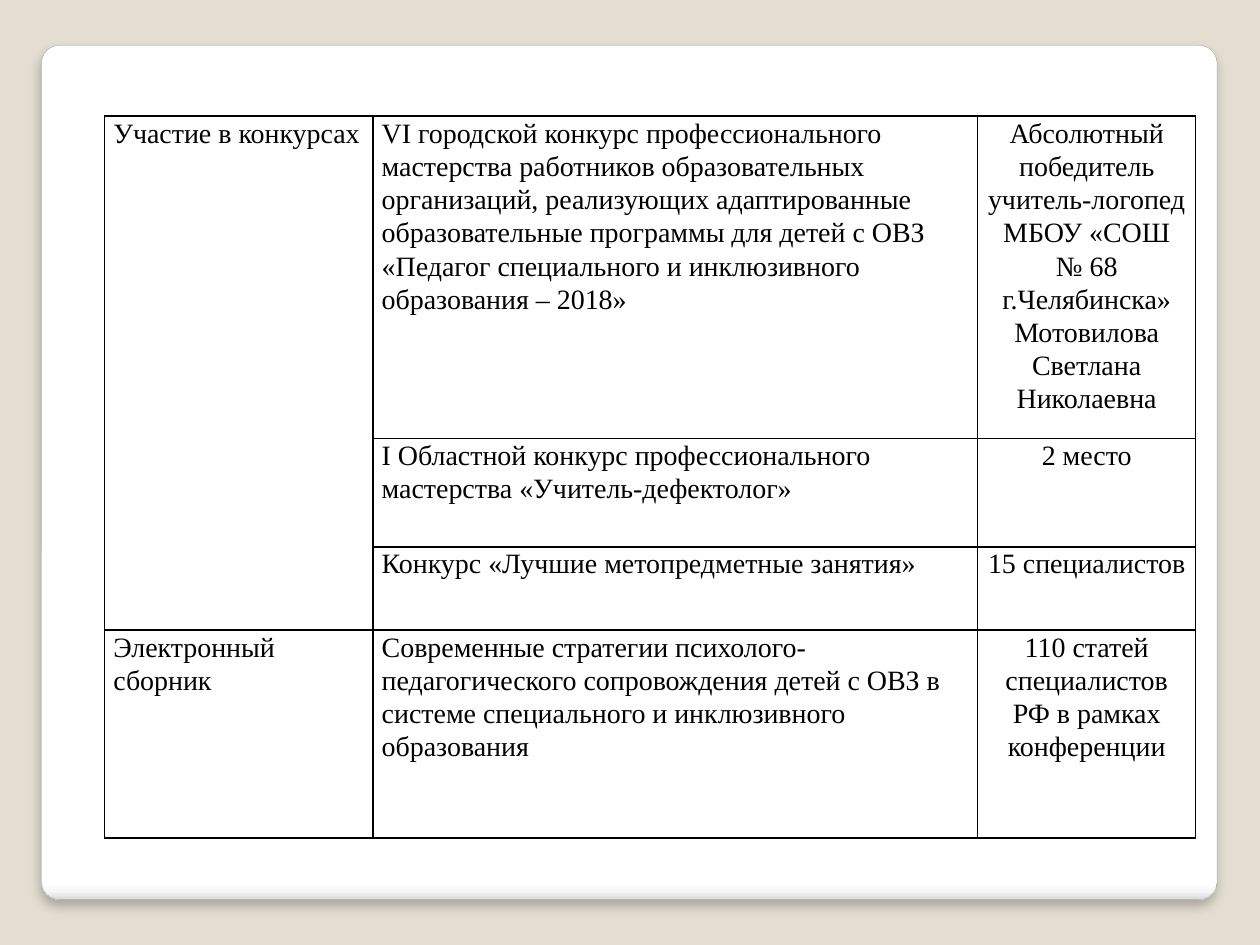
from lxml.etree import SubElement
from pptx import Presentation
from pptx.dml.color import RGBColor
from pptx.enum.shapes import MSO_SHAPE
from pptx.enum.text import PP_ALIGN
from pptx.oxml import parse_xml
from pptx.oxml.ns import nsdecls, qn
from pptx.util import Inches, Pt

COLORS = {"background": "E3DED1", "text": "000000", "border": "000000",
          "panel_line": "A4A4A4", "shadow": "000000"}
PANEL_STOPS = [(0, "FFFFFF"), (98, "FFFFFF"), (99, "F7F7F7"), (100, "DADADA")]
FONT = "Times New Roman"

COLUMN_WIDTHS = [2.13, 4.8, 1.73]
ROW_HEIGHTS = [2.56, 0.86, 0.66, 1.65]
CENTERED_COLUMN = 2
# Each cell is a list of paragraphs; an empty list is covered by the cell above.
ROWS = [
    (["Участие в конкурсах"],
     ["VI городской конкурс профессионального мастерства работников "
      "образовательных организаций, реализующих адаптированные",
      "образовательные программы для детей с ОВЗ",
      "«Педагог специального и инклюзивного образования – 2018»"],
     ["Абсолютный победитель учитель-логопед МБОУ «СОШ № 68 г.Челябинска»",
      "Мотовилова Светлана Николаевна"]),
    ([],
     ["I Областной конкурс профессионального мастерства «Учитель-дефектолог»"],
     ["2 место"]),
    ([],
     ["Конкурс «Лучшие метопредметные занятия»"],
     ["15 специалистов"]),
    (["Электронный сборник"],
     ["Современные стратегии психолого-педагогического сопровождения детей "
      "с ОВЗ в системе специального и инклюзивного образования"],
     ["110 статей", "специалистов РФ в рамках конференции"]),
]


def add_panel(slide):
    panel = slide.shapes.add_shape(MSO_SHAPE.ROUNDED_RECTANGLE, Inches(0.33),
                                   Inches(0.36), Inches(9.33), Inches(6.78))
    panel.adjustments[0] = 0.021
    panel.line.color.rgb = RGBColor.from_string(COLORS["panel_line"])
    panel.line.width = Pt(0.16)
    stops = "".join(f'<a:gs pos="{position * 1000}"><a:srgbClr val="{color}"/></a:gs>'
                    for position, color in PANEL_STOPS)
    properties = panel.element.spPr
    properties.find(qn("a:prstGeom")).addnext(parse_xml(
        f'<a:gradFill {nsdecls("a")} rotWithShape="1"><a:gsLst>{stops}</a:gsLst>'
        '<a:lin ang="5400000" scaled="0"/></a:gradFill>'))
    properties.append(parse_xml(
        f'<a:effectLst {nsdecls("a")}><a:outerShdw blurRad="{Pt(6)}" dist="{Pt(4)}" '
        f'dir="5400000" algn="tl" rotWithShape="0"><a:srgbClr val="{COLORS["shadow"]}">'
        '<a:alpha val="25000"/></a:srgbClr></a:outerShdw></a:effectLst>'))


def write_text(text_frame, paragraphs, size=16, align=PP_ALIGN.LEFT, line_spacing=1.07):
    for index, text in enumerate(paragraphs):
        paragraph = text_frame.paragraphs[0] if index == 0 else text_frame.add_paragraph()
        paragraph.alignment = align
        paragraph.line_spacing = line_spacing
        run = paragraph.add_run()
        run.text = text
        run.font.name = FONT
        run.font.size = Pt(size)
        run.font.color.rgb = RGBColor.from_string(COLORS["text"])


def format_cell(cell):
    cell.margin_left = cell.margin_right = Inches(0.07)
    cell.margin_top = cell.margin_bottom = 0
    properties = cell._tc.get_or_add_tcPr()
    for side in ("lnL", "lnR", "lnT", "lnB"):
        line = SubElement(properties, qn(f"a:{side}"), w=str(Pt(1)))
        fill = SubElement(line, qn("a:solidFill"))
        SubElement(fill, qn("a:srgbClr"), val=COLORS["border"])
    cell.fill.background()


def add_results_table(slide):
    table = slide.shapes.add_table(
        len(ROWS), len(COLUMN_WIDTHS), Inches(0.83), Inches(0.92),
        Inches(sum(COLUMN_WIDTHS)), Inches(sum(ROW_HEIGHTS))).table
    table.first_row = table.horz_banding = False
    for column, width in zip(table.columns, COLUMN_WIDTHS):
        column.width = Inches(width)
    for row, height in zip(table.rows, ROW_HEIGHTS):
        row.height = Inches(height)
    for row_index, row in enumerate(ROWS):
        for column_index, paragraphs in enumerate(row):
            cell = table.cell(row_index, column_index)
            format_cell(cell)
            centered = column_index == CENTERED_COLUMN
            write_text(cell.text_frame, paragraphs,
                       align=PP_ALIGN.CENTER if centered else PP_ALIGN.LEFT)
    table.cell(0, 0).merge(table.cell(2, 0))


def main():
    presentation = Presentation()
    presentation.slide_width, presentation.slide_height = Inches(10), Inches(7.5)
    slide = presentation.slides.add_slide(presentation.slide_layouts[6])
    background = slide.background.fill
    background.solid()
    background.fore_color.rgb = RGBColor.from_string(COLORS["background"])
    add_panel(slide)
    add_results_table(slide)
    presentation.save("out.pptx")


if __name__ == "__main__":
    main()
